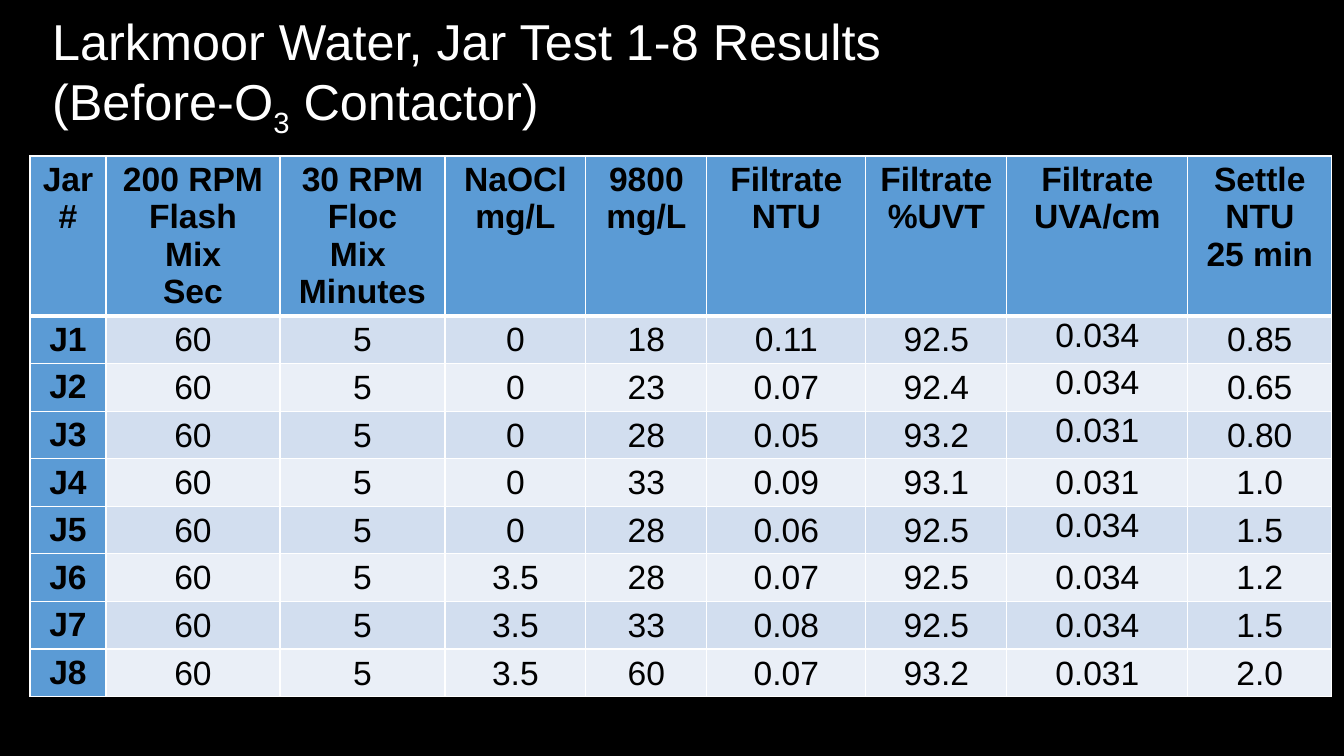
import copy
import lxml.etree
import pptx
import pptx.util
import pptx.dml.color
import pptx.enum.text
import pptx.oxml.ns

PX = 914400 / 100.8
COLORS = {
    "black": "000000",
    "white": "FFFFFF",
    "blue": "5B9BD5",
    "dark_band": "D2DEEF",
    "light_band": "EAEFF7",
}
ALIGN = pptx.enum.text.PP_ALIGN
ANCHOR = pptx.enum.text.MSO_ANCHOR
qn = pptx.oxml.ns.qn


def px(count):
    return pptx.util.Emu(round(count * PX))


def style_text(frame, color, align, font_format):
    for para in frame.paragraphs:
        para.alignment = align
        for span in para.runs:
            for name, value in font_format.items():
                setattr(span.font, name, value)
            span.font.color.rgb = pptx.dml.color.RGBColor.from_string(COLORS[color])
        for line_break in para._p.findall(qn("a:br")):
            line_break.append(copy.deepcopy(para.runs[0]._r.rPr))


deck = pptx.Presentation()
deck.slide_width = px(1344)
deck.slide_height = px(756)
page = deck.slides.add_slide(deck.slide_layouts[5])
page.background.fill.solid()
page.background.fill.fore_color.rgb = pptx.dml.color.RGBColor.from_string(COLORS["black"])

title = page.shapes.title
title_place = {"left": 42, "top": 11, "width": 1209, "height": 128}
for name, value in title_place.items():
    setattr(title, name, px(value))
title_format = {
    "word_wrap": True,
    "auto_size": pptx.enum.text.MSO_AUTO_SIZE.NONE,
    "vertical_anchor": ANCHOR.MIDDLE,
}
for name, value in title_format.items():
    setattr(title.text_frame, name, value)
title_para = title.text_frame.paragraphs[0]
title_para.text = "Larkmoor Water, Jar Test 1-8 Results\v(Before-O"
title_para.line_spacing = 0.9
subscript = title_para.add_run()
subscript.text = "3"
title_para.add_run().text = " Contactor)"
style_text(title.text_frame, "white", ALIGN.LEFT,
           {"name": "Arial", "size": pptx.util.Pt(36), "bold": False})
subscript.font._element.set("baseline", "-25000")

headers = ["Jar\v#", "200 RPM\nFlash\nMix\nSec", "30 RPM\nFloc\nMix \nMinutes",
           "NaOCl\nmg/L", "9800\nmg/L", "Filtrate\nNTU", "Filtrate\n%UVT",
           "Filtrate\nUVA/cm", "Settle\nNTU\n25 min"]
results = [
    ["J1", "60", "5", "0", "18", "0.11", "92.5", "0.034", "0.85"],
    ["J2", "60", "5", "0", "23", "0.07", "92.4", "0.034", "0.65"],
    ["J3", "60", "5", "0", "28", "0.05", "93.2", "0.031", "0.80"],
    ["J4", "60", "5", "0", "33", "0.09", "93.1", "0.031", "1.0"],
    ["J5", "60", "5", "0", "28", "0.06", "92.5", "0.034", "1.5"],
    ["J6", "60", "5", "3.5", "28", "0.07", "92.5", "0.034", "1.2"],
    ["J7", "60", "5", "3.5", "33", "0.08", "92.5", "0.034", "1.5"],
    ["J8", "60", "5", "3.5", "60", "0.07", "93.2", "0.031", "2.0"],
]
column_widths = [76, 174, 165, 141, 121, 159, 141, 181, 144]
row_heights = [160] + [47] * len(results)
top_anchored = {(1, 7), (2, 7), (3, 7), (5, 7)}

table = page.shapes.add_table(
    len(row_heights), len(column_widths), px(30), px(156),
    px(sum(column_widths)), px(sum(row_heights))).table
table.first_col = True
for column, width in zip(table.columns, column_widths):
    column.width = px(width)
for row, height in zip(table.rows, row_heights):
    row.height = px(height)

for row_index, values in enumerate([headers] + results):
    for column_index, value in enumerate(values):
        cell = table.cell(row_index, column_index)
        cell.text = value
        is_heading = row_index == 0 or column_index == 0
        if is_heading:
            fill = "blue"
        else:
            fill = "dark_band" if row_index % 2 else "light_band"
            centred = (row_index, column_index) not in top_anchored
            cell_format = {
                "margin_left": px(1),
                "margin_top": px(1),
                "margin_right": px(1),
                "margin_bottom": px(0),
                "vertical_anchor": ANCHOR.MIDDLE if centred else ANCHOR.TOP,
            }
            for name, setting in cell_format.items():
                setattr(cell, name, setting)
        style_text(cell.text_frame, "black", ALIGN.CENTER,
                   {"name": "Arial", "size": pptx.util.Pt(24), "bold": is_heading})

        properties = cell._tc.get_or_add_tcPr()
        for side, thick_row in {"lnL": None, "lnR": None, "lnT": 1, "lnB": 0}.items():
            weight = pptx.util.Pt(3 if row_index == thick_row else 1)
            border = lxml.etree.SubElement(properties, qn("a:" + side), w=str(int(weight)))
            solid = lxml.etree.SubElement(border, qn("a:solidFill"))
            lxml.etree.SubElement(solid, qn("a:srgbClr"), val=COLORS["white"])
        cell.fill.solid()
        cell.fill.fore_color.rgb = pptx.dml.color.RGBColor.from_string(COLORS[fill])

deck.save("out.pptx")
